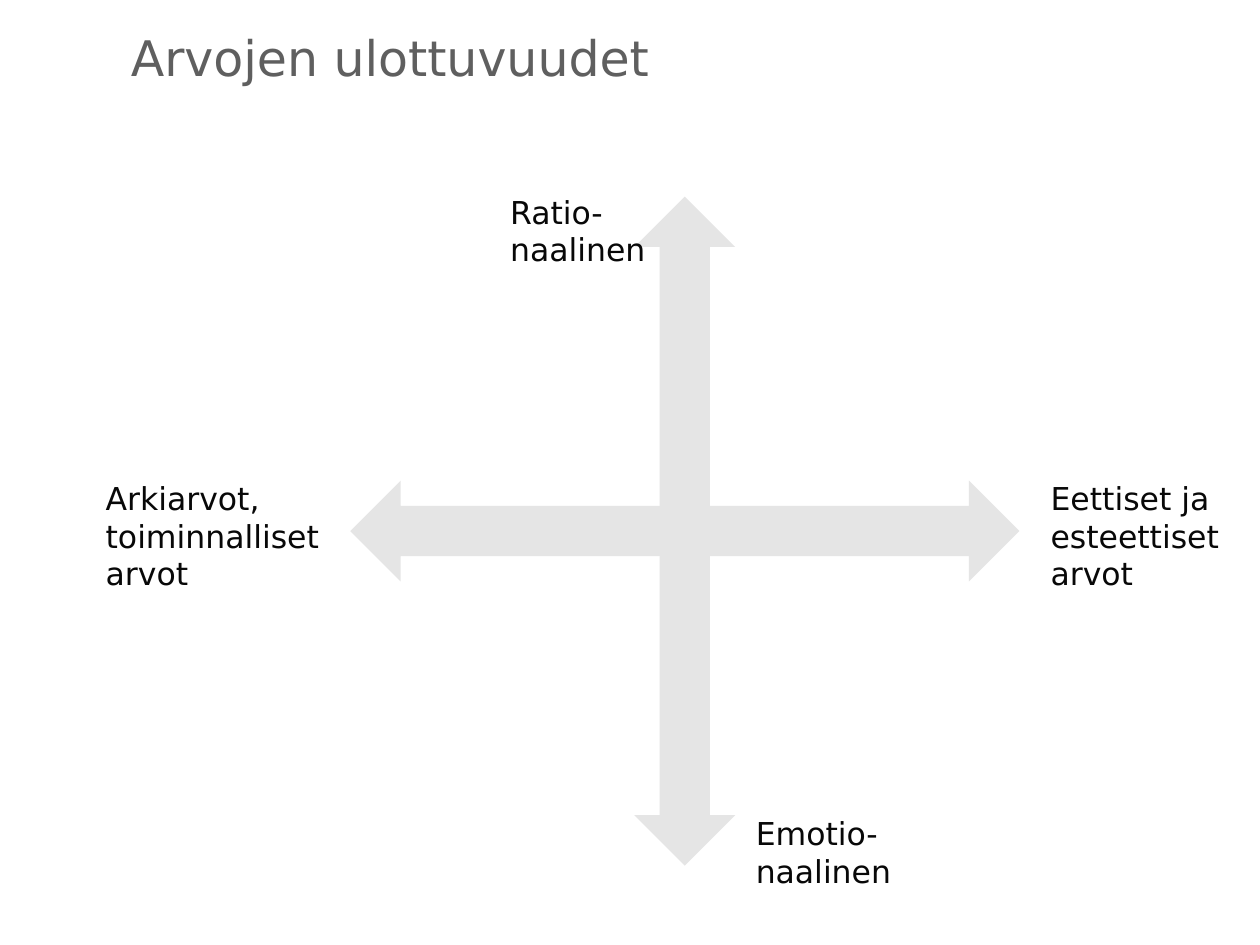
from dataclasses import dataclass

from pptx import Presentation
from pptx.dml.color import RGBColor
from pptx.enum.shapes import MSO_SHAPE
from pptx.enum.text import MSO_ANCHOR, MSO_AUTO_SIZE
from pptx.util import Inches, Pt


@dataclass(frozen=True)
class Theme:
    font: str = "DejaVu Sans"
    title_size: int = 28
    label_size: int = 18
    title_color: str = "5F5F5F"
    label_color: str = "080808"
    arrow_color: str = "E5E5E5"


THEME = Theme()
TITLE_BOX = (0.94, 0.17, 8.79, 1.25)
CROSS_BOX = (2.78, 1.56, 5.31, 5.31)
ARROW_THICKNESS = 0.8
AXIS_LABELS = [
    ("Arkiarvot, toiminnalliset arvot", (0.74, 3.75, 2.21, 1.01)),
    ("Eettiset ja esteettiset arvot", (8.24, 3.75, 1.6, 1.01)),
    ("Ratio-naalinen", (3.95, 1.48, 1.41, 0.71)),
    ("Emotio-naalinen", (5.9, 6.41, 1.6, 0.71)),
]


def add_text(slide, box, text, size, color, auto_size=MSO_AUTO_SIZE.NONE):
    frame = slide.shapes.add_textbox(*map(Inches, box)).text_frame
    frame.word_wrap = True
    frame.auto_size = auto_size
    frame.vertical_anchor = MSO_ANCHOR.TOP
    line = frame.paragraphs[0]
    line.text = text
    line.font.name = THEME.font
    line.font.size = Pt(size)
    line.font.color.rgb = RGBColor.from_string(color)


def add_title(slide, box):
    add_text(slide, box, "Arvojen ulottuvuudet", THEME.title_size, THEME.title_color)


def add_cross(slide, box):
    left, top, width, height = box
    arrow_top = top + (height - ARROW_THICKNESS) / 2
    for rotation in (0, 270):
        axis = slide.shapes.add_shape(
            MSO_SHAPE.LEFT_RIGHT_ARROW,
            Inches(left), Inches(arrow_top), Inches(width), Inches(ARROW_THICKNESS),
        )
        axis.rotation = rotation
        axis.shadow.inherit = False
        axis.fill.solid()
        axis.fill.fore_color.rgb = RGBColor.from_string(THEME.arrow_color)
        axis.line.fill.background()


def add_axis_labels(slide, labels):
    for text, box in labels:
        add_text(slide, box, text, THEME.label_size, THEME.label_color,
                 MSO_AUTO_SIZE.SHAPE_TO_FIT_TEXT)


def main():
    deck = Presentation()
    deck.slide_width, deck.slide_height = Inches(10), Inches(7.5)
    slide = deck.slides.add_slide(deck.slide_layouts[6])
    add_title(slide, TITLE_BOX)
    add_cross(slide, CROSS_BOX)
    add_axis_labels(slide, AXIS_LABELS)
    deck.save("out.pptx")


if __name__ == "__main__":
    main()
